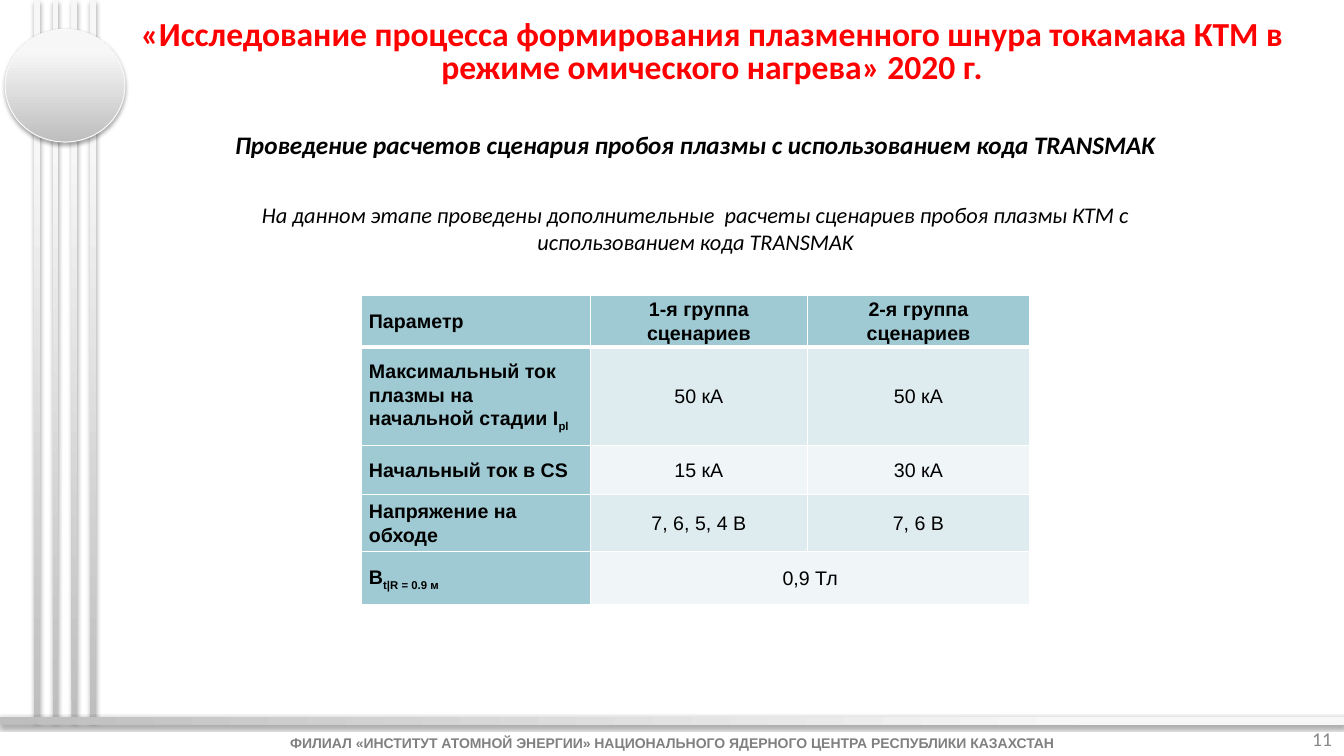
from pptx import Presentation
from pptx import util as u
from pptx.dml.color import RGBColor
from pptx.enum import shapes, text
from pptx.oxml import parse_xml
from pptx.oxml.ns import nsdecls

HEADING_FILL = "9FCAD3"
BAND_FILLS = ("F0F6F7", "DFECEF")
METAL_STOPS = ((0, "BEBEBE"), (80, "F7F7F7"), (100, "F8F8F8"))
COLUMN_WIDTHS = (5.77, 5.46, 5.61)
ROW_HEIGHTS = (1.3, 2.49, 1.24, 1.42, 1.35)
SCENARIOS = (
    (("Параметр", ""), "1-я группа сценариев", "2-я группа сценариев"),
    (("Максимальный ток плазмы на начальной стадии I", "pl"), "50 кА", "50 кА"),
    (("Начальный ток в CS", ""), "15 кА", "30 кА"),
    (("Напряжение на обходе", ""), "7, 6, 5, 4 В", "7, 6 В"),
    (("B", "t|R = 0.9 м"), "0,9 Тл", None),
)


def rgb(value):
    """Turn a hex string into a colour."""
    return RGBColor.from_string(value)


def box_of(*lengths):
    """Turn left, top, width and height in centimetres into lengths."""
    return [u.Cm(length) for length in lengths]


def style(run, size, font="Calibri", color="000000", bold=False, italic=False):
    """Format one run."""
    run.font.size, run.font.name = u.Pt(size), font
    run.font.bold, run.font.italic = bold, italic
    run.font.color.rgb = rgb(color)


def add_text(slide, box, content, size, align=text.PP_ALIGN.CENTER,
             anchor=text.MSO_ANCHOR.TOP, inset=(0.25, 0.13), spacing=None, **look):
    """Add a wrapped text box with one paragraph."""
    frame = slide.shapes.add_textbox(*box_of(*box)).text_frame
    frame.word_wrap = True
    frame.vertical_anchor = anchor
    frame.margin_left = frame.margin_right = u.Cm(inset[0])
    frame.margin_top = frame.margin_bottom = u.Cm(inset[1])
    frame.text = content
    paragraph = frame.paragraphs[0]
    paragraph.alignment = align
    paragraph.line_spacing = spacing
    style(paragraph.runs[0], size, **look)


def add_metal(slide, kind, box, rotation=0, outline=None):
    """Add a grey gradient shape with a soft shadow below it."""
    shape = slide.shapes.add_shape(kind, *box_of(*box))
    shape.rotation = rotation
    if outline:
        shape.line.color.rgb = rgb(outline)
        shape.line.width = u.Pt(0.75)
    else:
        shape.line.fill.background()
    stops = "".join(f'<a:gs pos="{at * 1000}"><a:srgbClr val="{color}"/></a:gs>'
                    for at, color in METAL_STOPS)
    properties = shape.element.spPr
    properties.find("{*}prstGeom").addnext(parse_xml(
        f'<a:gradFill {nsdecls("a")} rotWithShape="1"><a:gsLst>{stops}</a:gsLst>'
        '<a:lin ang="16200000" scaled="0"/></a:gradFill>'))
    properties.append(parse_xml(
        f'<a:effectLst {nsdecls("a")}><a:outerShdw blurRad="{u.Pt(3.1)}" '
        f'dist="{u.Pt(1.8)}" dir="5400000" rotWithShape="0"><a:srgbClr val="000000">'
        '<a:alpha val="35000"/></a:srgbClr></a:outerShdw></a:effectLst>'))


def set_borders(cell, top, bottom):
    """Give a cell white borders; top and bottom widths are in points."""
    properties = cell._tc.get_or_add_tcPr()
    for side, width in (("L", 1), ("R", 1), ("T", top), ("B", bottom)):
        properties.append(parse_xml(
            f'<a:ln{side} {nsdecls("a")} w="{u.Pt(width)}"><a:solidFill>'
            f'<a:srgbClr val="FFFFFF"/></a:solidFill></a:ln{side}>'))


def fill_cell(cell, content, subscript, fill, bold, align):
    """Write a table cell, with an optional subscript at the end."""
    cell.fill.solid()
    cell.fill.fore_color.rgb = rgb(fill)
    cell.vertical_anchor = text.MSO_ANCHOR.MIDDLE
    cell.margin_left = cell.margin_right = u.Cm(0.18)
    cell.margin_top = cell.margin_bottom = 0
    cell.text_frame.text = content
    paragraph = cell.text_frame.paragraphs[0]
    paragraph.alignment = align
    paragraph.line_spacing = 1.07
    if subscript:
        lowered = paragraph.add_run()
        lowered.text = subscript
        lowered._r.get_or_add_rPr().set("baseline", "-25000")
    for run in paragraph.runs:
        style(run, 14, "Arial", bold=bold)


def add_scenarios(slide):
    """Add the table of breakdown scenarios."""
    box = box_of(9.12, 7.44, sum(COLUMN_WIDTHS), sum(ROW_HEIGHTS))
    table = slide.shapes.add_table(len(SCENARIOS), len(COLUMN_WIDTHS), *box).table
    table.first_row = table.horz_banding = False
    for column, width in zip(table.columns, COLUMN_WIDTHS):
        column.width = u.Cm(width)
    for row, height in zip(table.rows, ROW_HEIGHTS):
        row.height = u.Cm(height)
    for r, (parameter, *groups) in enumerate(SCENARIOS):
        for c, (content, subscript) in enumerate([parameter] + [(g, "") for g in groups]):
            cell = table.cell(r, c)
            heading = r == 0 or c == 0
            set_borders(cell, 3 if r == 1 else 1, 3 if r == 0 else 1)
            if content is None:
                table.cell(r, c - 1).merge(cell)
                continue
            fill_cell(cell, content, subscript,
                      HEADING_FILL if heading else BAND_FILLS[r % 2], heading,
                      text.PP_ALIGN.CENTER if c else text.PP_ALIGN.LEFT)


def main():
    """Build the slide and save it."""
    deck = Presentation()
    deck.slide_width, deck.slide_height = u.Cm(33.88), u.Cm(19.05)
    slide = deck.slides.add_slide(deck.slide_layouts[6])
    wide = (0.3, 0.15)
    bar = shapes.MSO_SHAPE.ROUNDED_RECTANGLE

    add_text(slide, (0.94, 18.36, 32, 0.74),
             "ФИЛИАЛ «ИНСТИТУТ АТОМНОЙ ЭНЕРГИИ» НАЦИОНАЛЬНОГО ЯДЕРНОГО ЦЕНТРА "
             "РЕСПУБЛИКИ КАЗАХСТАН",
             10, inset=wide, font="Arial", color="808080", bold=True)
    for i in range(4):
        add_metal(slide, bar, (0.86 + 0.47 * i, 0, 0.15, 18.16))
    add_metal(slide, bar, (16.84, 1.22, 0.2, 33.88), rotation=90)
    add_metal(slide, shapes.MSO_SHAPE.OVAL, (0.13, 0.74, 3.02, 2.84), outline="F9F9F9")

    add_text(slide, (2.95, 0.38, 30, 1.93),
             "«Исследование процесса формирования плазменного шнура токамака КТМ "
             "в режиме омического нагрева» 2020 г.",
             24, inset=wide, spacing=0.8, color="FF0000", bold=True)
    add_text(slide, (5.33, 3.12, 24.41, 1.02),
             "Проведение расчетов сценария пробоя плазмы с использованием кода TRANSMAK",
             18, bold=True, italic=True)
    add_text(slide, (32.74, 18.11, 1.14, 1.02), "11", 14, align=text.PP_ALIGN.RIGHT,
             anchor=text.MSO_ANCHOR.MIDDLE, inset=wide, color="898989")
    add_text(slide, (5.33, 4.95, 24.41, 1.63),
             "На данном этапе проведены дополнительные  расчеты сценариев пробоя "
             "плазмы КТМ с использованием кода TRANSMAK", 16, italic=True)
    add_scenarios(slide)
    deck.save("out.pptx")


if __name__ == "__main__":
    main()
